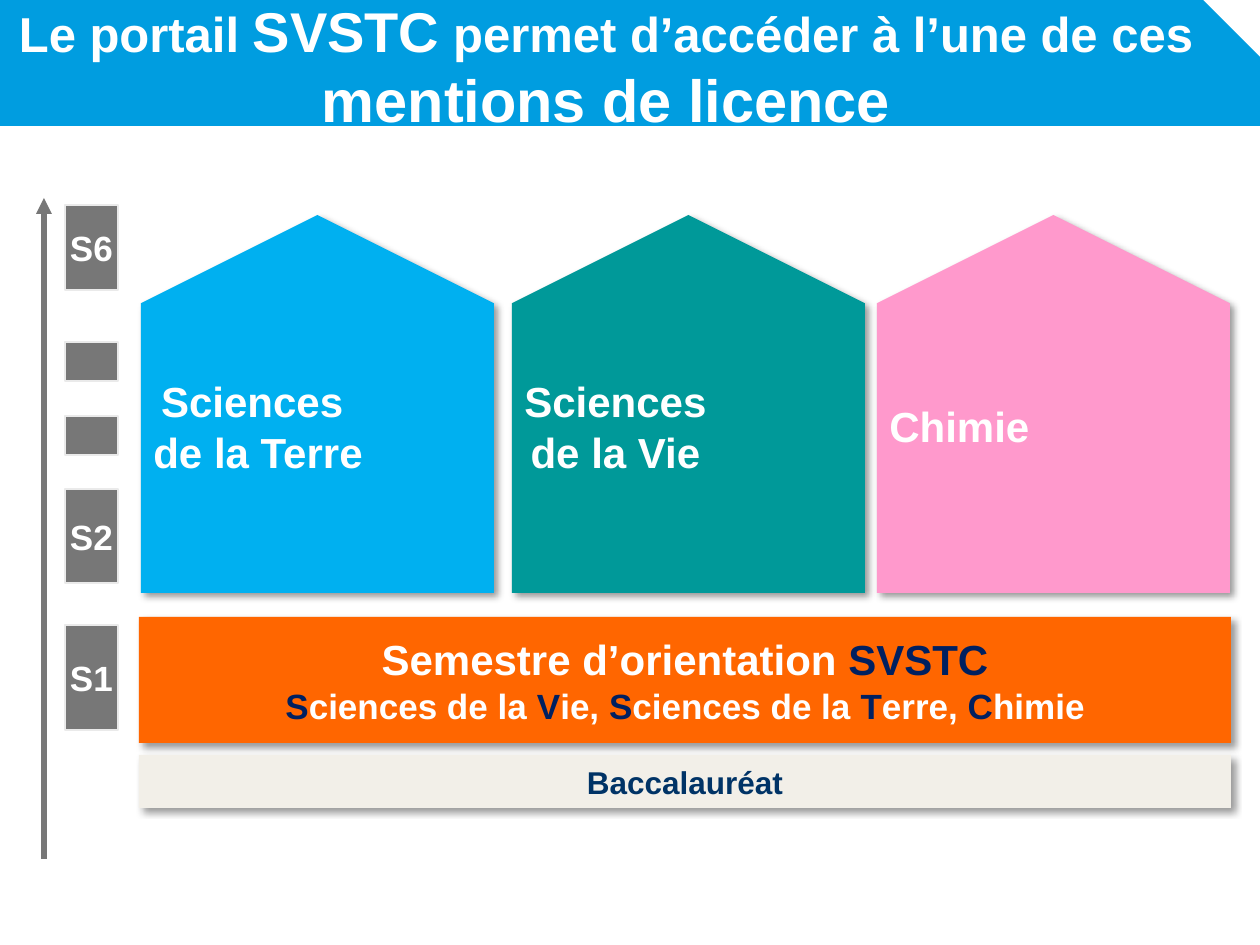
from lxml.etree import SubElement
from pptx import Presentation
from pptx.dml.color import RGBColor
from pptx.enum.shapes import MSO_CONNECTOR, MSO_SHAPE
from pptx.enum.text import MSO_ANCHOR, PP_ALIGN
from pptx.oxml.ns import qn
from pptx.util import Pt

PX = 914400 / 126
WHITE, NAVY, GREY = "FFFFFF", "002060", "777777"

# Each line is a list of (text, size, colour) spans.
TITLE = [[("Le portail ", 28, WHITE), ("SVSTC", 32, WHITE),
          (" permet d’accéder à l’une de ces ", 28, WHITE),
          ("mentions de licence", 34, WHITE)]]
SUBJECTS = [("S", "ciences de la "), ("V", "ie, "), ("S", "ciences de la "),
            ("T", "erre, "), ("C", "himie")]
ORIENTATION = [[("Semestre d’orientation ", 24, WHITE), ("SVSTC", 24, NAVY), ("\n", 24, NAVY)]
               + [span for initial, rest in SUBJECTS
                  for span in ((initial, 20, NAVY), (rest, 20, WHITE))]]
BACCALAUREATE = [[("Baccalauréat", 18, "003366")]]

# Top, height, fill, lines
BANDS = [(617, 126, "FF6600", ORIENTATION), (755, 53, "F2EFE8", BACCALAUREATE)]
# Top, height, label
SEMESTERS = [(205, 85, "S6"), (342, 39, ""), (416, 39, ""), (489, 94, "S2"), (625, 105, "S1")]
# Left, fill, lines
DEGREES = [(141, "00B0F0", ["Sciences ", "de la Terre"]),
           (512, "009999", ["Sciences", "de la Vie"]),
           (877, "FF99CC", ["Chimie"])]
DEGREE_TOP, DEGREE_WIDTH, DEGREE_HEIGHT = 215, 353, 378


def px(*lengths):
    return [round(length * PX) for length in lengths]


def colour(value):
    return RGBColor.from_string(value)


def write(shape, lines, wrap=False, anchor=MSO_ANCHOR.MIDDLE):
    frame = shape.text_frame
    frame.word_wrap = wrap
    frame.vertical_anchor = anchor
    for index, spans in enumerate(lines):
        paragraph = frame.add_paragraph() if index else frame.paragraphs[0]
        paragraph.alignment = PP_ALIGN.CENTER
        for text, size, value in spans:
            if text == "\n":
                paragraph.add_line_break()
                continue
            span = paragraph.add_run()
            span.text = text
            span.font.name = "Arial"
            span.font.size = Pt(size)
            span.font.bold = True
            span.font.color.rgb = colour(value)


def add_block(page, kind, bounds, fill, border=None):
    shape = page.shapes.add_shape(kind, *px(*bounds))
    shape.shadow.inherit = False
    shape.fill.solid()
    shape.fill.fore_color.rgb = colour(fill)
    if border:
        shape.line.color.rgb = colour(border)
        shape.line.width = Pt(0.75)
    else:
        shape.line.fill.background()
    return shape


def cast_shadow(shape):
    effects = shape._element.spPr.find(qn("a:effectLst"))
    shadow = SubElement(effects, qn("a:outerShdw"), blurRad=str(Pt(4)), dist=str(Pt(3)),
                        dir=str(45 * 60000), rotWithShape="0")
    black = SubElement(shadow, qn("a:srgbClr"), val="000000")
    SubElement(black, qn("a:alpha"), val="40000")


def add_title(page):
    banner = add_block(page, MSO_SHAPE.SNIP_1_RECTANGLE, (0, 0, 1261, 126), "009DE0")
    banner.adjustments[0] = 0.46
    box = page.shapes.add_textbox(*px(0, -10, 1212, 157))
    write(box, TITLE, wrap=True, anchor=MSO_ANCHOR.TOP)


def add_time_arrow(page):
    arrow = page.shapes.add_connector(MSO_CONNECTOR.STRAIGHT, *px(44, 859, 44, 198))
    arrow.line.color.rgb = colour(GREY)
    arrow.line.width = Pt(3)
    SubElement(arrow.line._get_or_add_ln(), qn("a:tailEnd"), type="triangle")
    SubElement(arrow._element.spPr, qn("a:effectLst"))


def add_degree(page, left, fill, lines):
    """Draw a pentagon pointing up: a sideways arrow turned about its centre."""
    shift = (DEGREE_HEIGHT - DEGREE_WIDTH) / 2
    bounds = (left - shift, DEGREE_TOP + shift, DEGREE_HEIGHT, DEGREE_WIDTH)
    house = add_block(page, MSO_SHAPE.PENTAGON, bounds, fill)
    house.rotation = 270
    house.adjustments[0] = 0.25
    cast_shadow(house)
    write(house, [[(line, 24, WHITE)] for line in lines])
    house.text_frame._txBody.bodyPr.set("vert", "eaVert")


def main():
    deck = Presentation()
    deck.slide_width, deck.slide_height = px(1260, 945)
    page = deck.slides.add_slide(deck.slide_layouts[6])

    add_title(page)
    for top, height, fill, lines in BANDS:
        band = add_block(page, MSO_SHAPE.RECTANGLE, (139, top, 1092, height), fill)
        cast_shadow(band)
        write(band, lines)
    add_time_arrow(page)
    for top, height, label in SEMESTERS:
        marker = add_block(page, MSO_SHAPE.RECTANGLE, (65, top, 53, height), GREY, "EAEAEA")
        if label:
            write(marker, [[(label, 20, WHITE)]])
    for degree in DEGREES:
        add_degree(page, *degree)

    deck.save("out.pptx")


if __name__ == "__main__":
    main()
